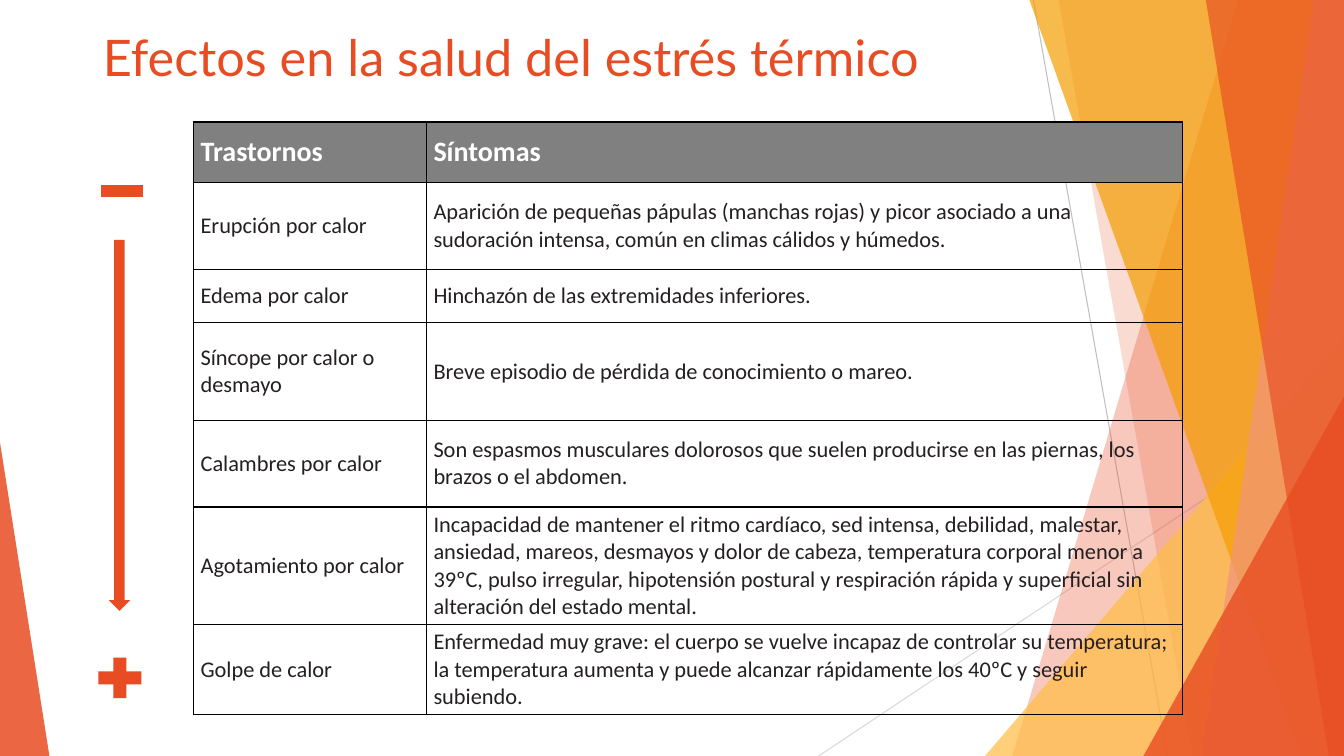
from lxml.etree import SubElement
from pptx import Presentation
from pptx.dml.color import RGBColor
from pptx.enum.shapes import MSO_CONNECTOR, MSO_SHAPE as SHAPE
from pptx.enum.text import MSO_ANCHOR, PP_ALIGN
from pptx.oxml import parse_xml
from pptx.oxml.ns import nsdecls, qn
from pptx.util import Inches, Pt

WIDTH, HEIGHT = 13.33, 7.5
ORANGE = "E84C22"
LINES = [((10.25, 0), (11.58, HEIGHT), "BFBFBF"),
         ((WIDTH, 4.03), (8.12, HEIGHT), "D9D9D9")]
BACK_BANDS = [(12.28, 10.04, ORANGE, 30), (10.5, 11.83, ORANGE, 20)]
FRONT_BANDS = [(10.21, 12.91, "F49D00", 70), (13.03, 11.92, "F1947A", 70),
               (11.96, 13.18, ORANGE, 65)]
COLUMNS = [2.31, 7.5]
ROW_HEIGHTS = [0.6, 0.86, 0.53, 0.97, 0.86, 1.11, 0.86]
ROWS = [
    ("Trastornos", "Síntomas"),
    ("Erupción por calor",
     "Aparición de pequeñas pápulas (manchas rojas) y picor asociado a una "
     "sudoración intensa, común en climas cálidos y húmedos."),
    ("Edema por calor", "Hinchazón de las extremidades inferiores."),
    ("Síncope por calor o desmayo",
     "Breve episodio de pérdida de conocimiento o mareo."),
    ("Calambres por calor",
     "Son espasmos musculares dolorosos que suelen producirse en las piernas, "
     "los brazos o el abdomen."),
    ("Agotamiento por calor",
     "Incapacidad de mantener el ritmo cardíaco, sed intensa, debilidad, "
     "malestar, ansiedad, mareos, desmayos y dolor de cabeza, temperatura "
     "corporal menor a 39ºC, pulso irregular, hipotensión postural y "
     "respiración rápida y superficial sin alteración del estado mental."),
    ("Golpe de calor",
     "Enfermedad muy grave: el cuerpo se vuelve incapaz de controlar su "
     "temperatura; la temperatura aumenta y puede alcanzar rápidamente los "
     "40ºC y seguir subiendo."),
]
HEADER_FONT = {"name": "Calibri", "size": Pt(20), "bold": True}
BODY_FONT = {"name": "Calibri", "size": Pt(16), "bold": False}
CELL_FORMAT = {"vertical_anchor": MSO_ANCHOR.MIDDLE,
               "margin_left": Inches(0.07), "margin_right": Inches(0.07),
               "margin_top": Inches(0.04), "margin_bottom": Inches(0.04)}


def rgb(color):
    return RGBColor.from_string(color)


def apply(obj, values):
    for name, value in values.items():
        setattr(obj, name, value)


def paint(sp, color, opacity=100):
    sp.shadow.inherit = False
    sp.fill.solid()
    sp.fill.fore_color.rgb = rgb(color)
    sp.line.fill.background()
    if opacity < 100:
        clr = sp._element.spPr.find(".//" + qn("a:srgbClr"))
        SubElement(clr, qn("a:alpha")).set("val", str(opacity * 1000))


def add_line(s, start, end, color):
    line = s.shapes.add_connector(
        MSO_CONNECTOR.STRAIGHT, *[Inches(v) for v in start + end])
    line.line.color.rgb = rgb(color)
    line.line.width = Pt(0.75)
    SubElement(line._element.spPr, qn("a:effectLst"))


def add_band(s, top_x, bottom_x, color, opacity):
    corners = [(WIDTH, 0), (WIDTH, HEIGHT), (bottom_x, HEIGHT)]
    builder = s.shapes.build_freeform(Inches(top_x), Inches(0))
    builder.add_line_segments([(Inches(x), Inches(y)) for x, y in corners])
    paint(builder.convert_to_shape(), color, opacity)


def add_preset(s, kind, box, color=ORANGE, opacity=100, adjust=None):
    sp = s.shapes.add_shape(kind, *[Inches(v) for v in box])
    if adjust is not None:
        sp.adjustments[0] = adjust
    paint(sp, color, opacity)


def add_backdrop(s):
    for line in LINES:
        add_line(s, *line)
    for band in BACK_BANDS:
        add_band(s, *band)
    add_preset(s, SHAPE.ISOSCELES_TRIANGLE, (9.77, 3.33, 3.56, 4.17), "FFBD47", 72, 1)
    for band in FRONT_BANDS:
        add_band(s, *band)
    add_preset(s, SHAPE.ISOSCELES_TRIANGLE, (11.34, 3.93, 1.99, 3.57), ORANGE, 80, 1)
    add_preset(s, SHAPE.ISOSCELES_TRIANGLE, (0, 4.39, 0.49, 3.11), ORANGE, 85, 0)


def set_title(s, text):
    sp = s.shapes.title
    apply(sp, {"left": Inches(0.92), "top": Inches(0.21),
               "width": Inches(10.68), "height": Inches(1.2)})
    tf = sp.text_frame
    tf.text = text
    apply(tf, {"vertical_anchor": MSO_ANCHOR.TOP, "word_wrap": True})
    p = tf.paragraphs[0]
    p.alignment = PP_ALIGN.LEFT
    apply(p.runs[0].font, {"name": "Lato", "size": Pt(36)})
    p.runs[0].font.color.rgb = rgb(ORANGE)


def add_borders(cell):
    tc_pr = cell._tc.get_or_add_tcPr()
    for side in "LRTB":
        tc_pr.append(parse_xml(
            f'<a:ln{side} {nsdecls("a")} w="12700"><a:solidFill>'
            f'<a:srgbClr val="000000"/></a:solidFill></a:ln{side}>'))


def fill_cell(cell, text, header):
    apply(cell, CELL_FORMAT)
    add_borders(cell)
    if header:
        cell.fill.solid()
        cell.fill.fore_color.rgb = rgb("808080")
    else:
        cell.fill.background()
    cell.text = text
    font = cell.text_frame.paragraphs[0].runs[0].font
    apply(font, HEADER_FONT if header else BODY_FONT)
    font.color.rgb = rgb("FFFFFF" if header else "242021")


def add_symptom_table(s):
    table = s.shapes.add_table(
        len(ROWS), len(COLUMNS), Inches(1.92), Inches(1.21),
        Inches(sum(COLUMNS)), Inches(sum(ROW_HEIGHTS))).table
    apply(table, {"first_row": False, "horz_banding": False})
    for column, width in zip(table.columns, COLUMNS):
        column.width = Inches(width)
    for i, (row, height) in enumerate(zip(table.rows, ROW_HEIGHTS)):
        row.height = Inches(height)
        for cell, text in zip(row.cells, ROWS[i]):
            fill_cell(cell, text, header=i == 0)


def add_severity_scale(s):
    add_preset(s, SHAPE.DOWN_ARROW, (1.08, 2.38, 0.21, 3.68))
    add_preset(s, SHAPE.MATH_PLUS, (0.9, 6.45, 0.58, 0.55))
    add_preset(s, SHAPE.MATH_MINUS, (0.92, 1.66, 0.58, 0.47))


def main():
    prs = Presentation()
    apply(prs, {"slide_width": Inches(WIDTH), "slide_height": Inches(HEIGHT)})
    s = prs.slides.add_slide(prs.slide_layouts[5])
    add_backdrop(s)
    set_title(s, "Efectos en la salud del estrés térmico")
    add_symptom_table(s)
    add_severity_scale(s)
    prs.save("out.pptx")


if __name__ == "__main__":
    main()
